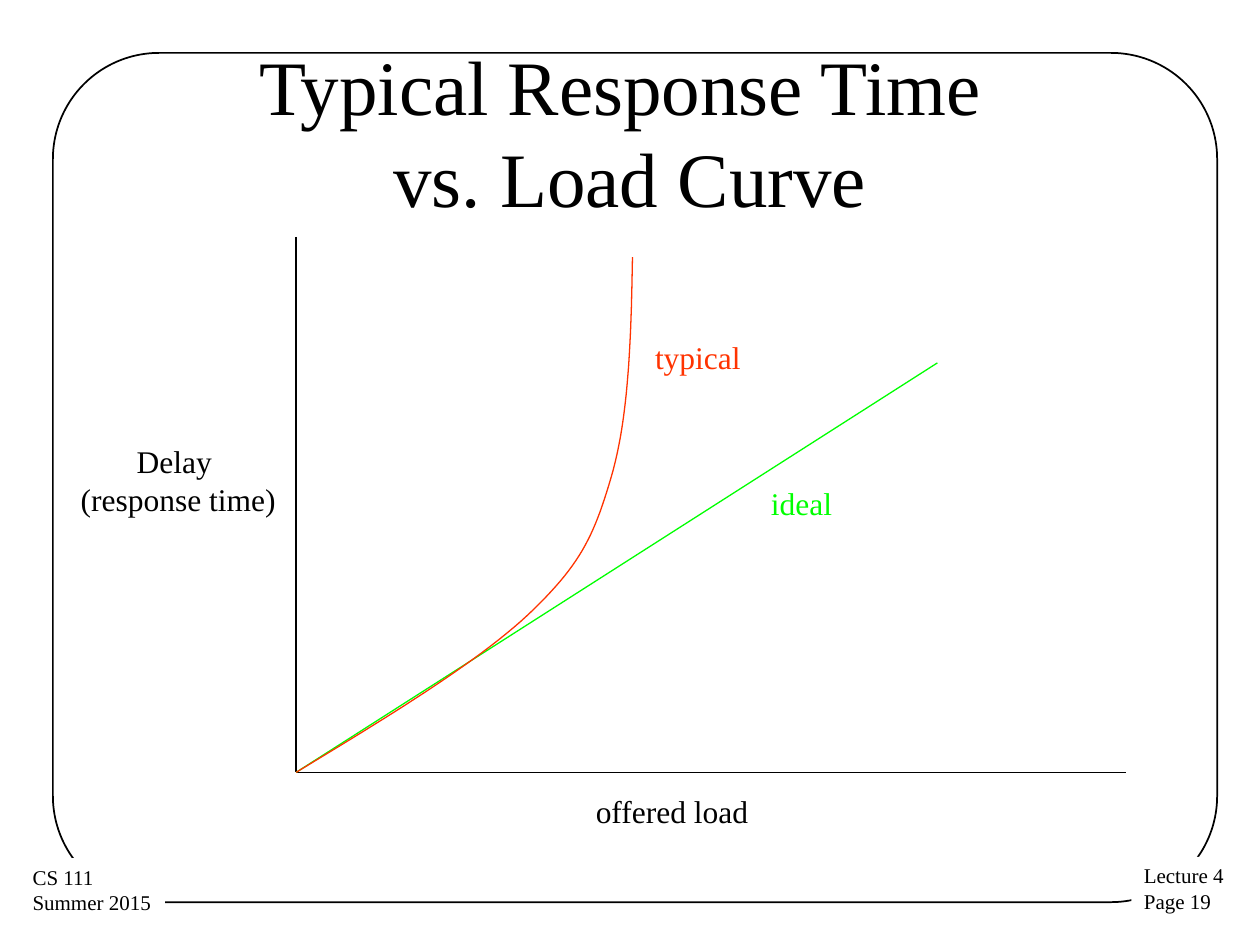
import lxml.etree
import pptx
import pptx.dml.color
import pptx.enum.shapes
import pptx.enum.text
import pptx.oxml.ns
import pptx.util

Inches = pptx.util.Inches
Shapes = pptx.enum.shapes.MSO_SHAPE
Align = pptx.enum.text.PP_ALIGN
AutoSize = pptx.enum.text.MSO_AUTO_SIZE

FONT = "Times New Roman"
COLORS = {"ink": "000000", "paper": "FFFFFF", "ideal": "00FF00", "typical": "FF3300"}


def rgb(name):
    """Return the named palette colour."""
    return pptx.dml.color.RGBColor.from_string(COLORS[name])


def add_text(slide, box, lines, size, color="ink", align=Align.LEFT, fill=None, wrap=False):
    """Place a text box with one paragraph per line."""
    label = slide.shapes.add_textbox(*map(Inches, box))
    if fill:
        label.fill.solid()
        label.fill.fore_color.rgb = rgb(fill)
    frame = label.text_frame
    frame.word_wrap = wrap
    frame.auto_size = AutoSize.NONE if wrap else AutoSize.SHAPE_TO_FIT_TEXT
    frame.text = "\n".join(lines)
    for para in frame.paragraphs:
        para.alignment = align
        for span in para.runs:
            span.font.name = FONT
            span.font.size = pptx.util.Pt(size)
            span.font.color.rgb = rgb(color)
    return label


def add_line(slide, start, end, color="ink"):
    """Draw a thin straight line without a shadow."""
    line = slide.shapes.add_connector(
        pptx.enum.shapes.MSO_CONNECTOR.STRAIGHT, *map(Inches, start + end))
    line.line.color.rgb = rgb(color)
    line.line.width = pptx.util.Pt(0.75)
    lxml.etree.SubElement(line._element.spPr, pptx.oxml.ns.qn("a:effectLst"))


def bezier(points, steps=24):
    """Return points along a cubic curve, leaving out its start."""
    result = []
    for step in range(1, steps + 1):
        t = step / steps
        weights = ((1 - t) ** 3, 3 * t * (1 - t) ** 2, 3 * t * t * (1 - t), t ** 3)
        result.append(tuple(
            sum(weight * point[axis] for weight, point in zip(weights, points))
            for axis in (0, 1)))
    return result


def add_curve(slide, knots, color):
    """Draw a smooth open curve through chained cubic segments."""
    knots = [(Inches(x), Inches(y)) for x, y in knots]
    points = [point for first in range(0, len(knots) - 1, 3)
              for point in bezier(knots[first:first + 4])]
    builder = slide.shapes.build_freeform(*knots[0])
    builder.add_line_segments(points, close=False)
    curve = builder.convert_to_shape()
    curve.shadow.inherit = False
    curve.fill.background()
    curve.line.color.rgb = rgb(color)
    curve.line.width = pptx.util.Pt(0.75)


def add_frame(slide, box):
    """Draw the rounded border with the course and page labels on its corners."""
    left, top, width, height = box
    border = slide.shapes.add_shape(Shapes.ROUNDED_RECTANGLE, *map(Inches, box))
    border.adjustments[0] = 0.125
    border.shadow.inherit = False
    border.fill.background()
    border.line.color.rgb = rgb("ink")
    border.line.width = pptx.util.Pt(1)
    base = top + height
    add_text(slide, (left + width - 0.68, base - 0.36, 0.85, 0.51),
             ["Lecture 4", "Page 19"], 12, fill="paper")
    add_text(slide, (left - 0.26, base - 0.35, 1.15, 0.51),
             ["CS 111", "Summer 2015"], 12, fill="paper")


def add_title(slide, box):
    """Place the centred two-line title."""
    title = add_text(slide, box, ["Typical Response Time \vvs. Load Curve"], 44,
                     align=Align.CENTER, wrap=True)
    title.text_frame.vertical_anchor = pptx.enum.text.MSO_ANCHOR.MIDDLE


def add_load_plot(slide, box):
    """Draw the axes, both response curves and their labels."""
    left, top, width, height = box
    base = top + height
    origin = (left, base)
    add_line(slide, (left, top), origin)
    add_line(slide, origin, (left + width, base))
    add_text(slide, (left - 1.82, top + 1.58, 1.77, 0.71),
             ["Delay ", "(response time)"], 18, align=Align.CENTER)
    add_line(slide, origin, (left + 5.09, base - 3.25), "ideal")
    add_text(slide, (left + 3.67, top + 1.91, 0.69, 0.4), ["ideal"], 18, "ideal")
    rises = [(0, 0), (0.71, 0.43), (1.42, 0.86), (1.84, 1.25), (2.25, 1.64),
             (2.36, 1.86), (2.5, 2.34), (2.64, 2.81), (2.66, 3.45), (2.67, 4.09)]
    add_curve(slide, [(left + x, base - y) for x, y in rises], "typical")
    add_text(slide, (left + 2.75, top + 0.75, 0.89, 0.4), ["typical"], 18, "typical")
    add_text(slide, (left + 2.28, base + 0.11, 1.42, 0.4), ["offered load"], 18)


def main():
    """Build and save the slide."""
    deck = pptx.Presentation()
    deck.slide_width, deck.slide_height = Inches(10), Inches(7.5)
    slide = deck.slides.add_slide(deck.slide_layouts[6])
    add_frame(slide, (0.42, 0.42, 9.24, 6.74))
    add_title(slide, (0.5, 0.41, 9, 1.25))
    add_load_plot(slide, (2.35, 1.88, 6.59, 4.25))
    deck.save("out.pptx")


if __name__ == "__main__":
    main()
